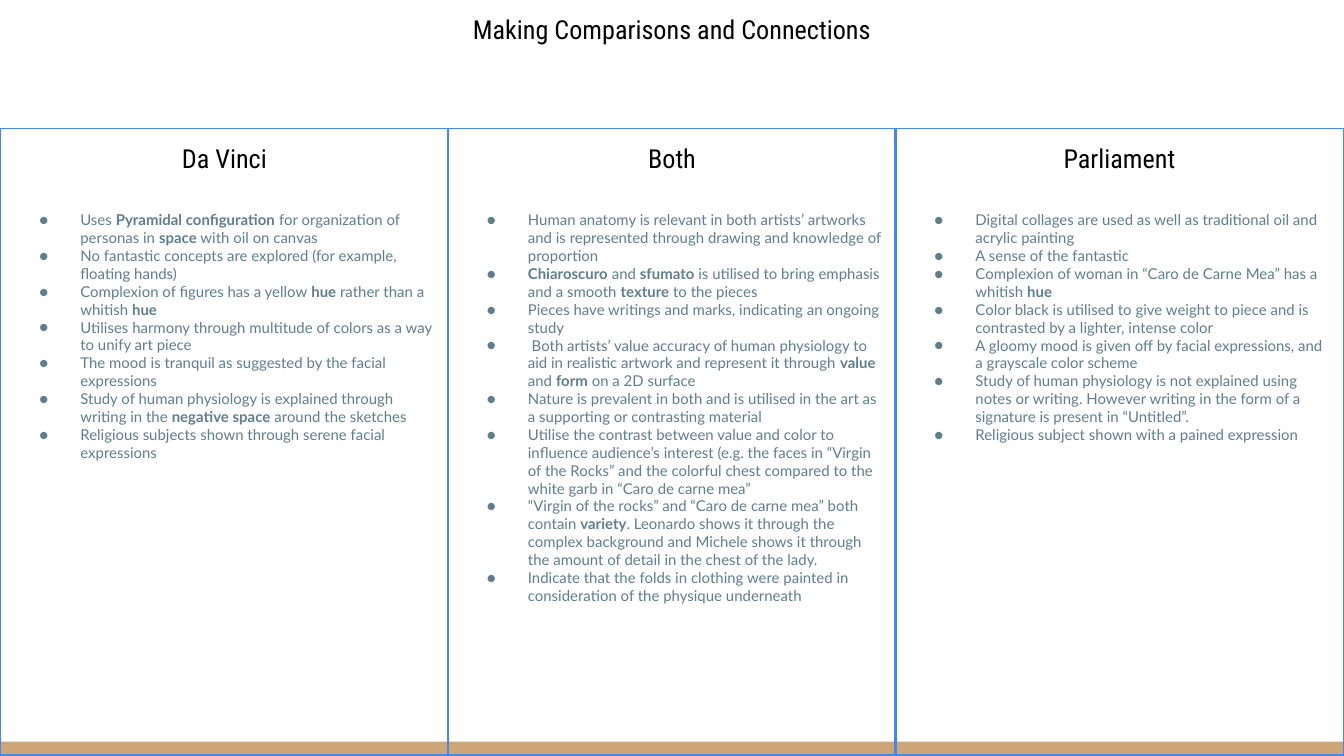
from pptx import Presentation
from pptx.dml.color import RGBColor
from pptx.enum.shapes import MSO_SHAPE as Shape
from pptx.enum.text import PP_ALIGN as Align
from pptx.oxml.ns import qn
from pptx.util import Pt
from lxml.etree import SubElement

BLACK, SLATE, BLUE, TAN = "000000", "607D8B", "4A86E8", "CCA677"
COLUMN_TOP, COLUMN_WIDTH, COLUMN_PITCH = 69, 240.5, 239.75

# Heading, heading width, body height and bullets; ** marks bold words
columns = [
    ("Da Vinci", 309.6, 299.5, [
        "Uses **Pyramidal configuration** for organization of personas in **space** with oil on canvas",
        "No fantastic concepts are explored (for example, floating hands)",
        "Complexion of figures has a yellow **hue** rather than a whitish **hue**",
        "Utilises harmony through multitude of colors as a way to unify art piece",
        "The mood is tranquil as suggested by the facial expressions",
        "Study of human physiology is explained through writing in the **negative space** around the sketches",
        "Religious subjects shown through serene facial expressions",
    ]),
    ("Both", 75.6, 297.5, [
        "Human anatomy is relevant in both artists’ artworks and is represented through drawing "
        "and knowledge of proportion",
        "**Chiaroscuro** and **sfumato** is utilised to bring emphasis and a smooth **texture** to the pieces",
        "Pieces have writings and marks, indicating an ongoing study",
        " Both artists’ value accuracy of human physiology to aid in realistic artwork and represent it "
        "through **value** and **form** on a 2D surface",
        "Nature is prevalent in both and is utilised in the art as a supporting or contrasting material",
        "Utilise the contrast between value and color to influence audience’s interest (e.g. the faces in "
        "“Virgin of the Rocks” and the colorful chest compared to the white garb in “Caro de carne mea”",
        "“Virgin of the rocks” and “Caro de carne mea” both contain **variety**. Leonardo shows it through "
        "the complex background and Michele shows it through the amount of detail in the chest of the lady.",
        "Indicate that the folds in clothing were painted in consideration of the physique underneath",
    ]),
    ("Parliament", 309.6, 295, [
        "Digital collages are used as well as traditional oil and acrylic painting",
        "A sense of the fantastic",
        "Complexion of woman in “Caro de Carne Mea” has a whitish **hue**",
        "Color black is utilised to give weight to piece and is contrasted by a lighter, intense color",
        "A gloomy mood is given off by facial expressions, and a grayscale color scheme",
        "Study of human physiology is not explained using notes or writing. However writing in the form "
        "of a signature is present in “Untitled”.",
        "Religious subject shown with a pained expression",
    ]),
]


def color(value):
    return RGBColor.from_string(value)


def add_text(left, top, width, height, lines, font, size, text_color, bulleted=False):
    text_frame = slide.shapes.add_textbox(Pt(left), Pt(top), Pt(width), Pt(height)).text_frame
    text_frame.word_wrap = True
    text_frame.margin_left = text_frame.margin_right = Pt(7.2)
    text_frame.margin_top = text_frame.margin_bottom = Pt(7.2)
    for index, line in enumerate(lines):
        paragraph = text_frame.add_paragraph() if index else text_frame.paragraphs[0]
        paragraph.alignment = Align.LEFT if bulleted else Align.CENTER
        if bulleted:
            properties = paragraph._p.get_or_add_pPr()
            properties.set("marL", str(Pt(36)))
            properties.set("indent", str(Pt(-22)))
            bullet_color = SubElement(properties, qn("a:buClr"))
            SubElement(bullet_color, qn("a:srgbClr"), val=text_color)
            SubElement(properties, qn("a:buFont"), typeface=font)
            SubElement(properties, qn("a:buChar"), char="●")
        for position, part in enumerate(line.split("**")):
            if part:
                run = paragraph.add_run()
                run.text = part
                run.font.name = font
                run.font.size = Pt(size)
                run.font.bold = position % 2 == 1
                run.font.color.rgb = color(text_color)


presentation = Presentation()
presentation.slide_width, presentation.slide_height = Pt(720), Pt(405)
slide = presentation.slides.add_slide(presentation.slide_layouts[6])

# Bottom band
band = slide.shapes.add_shape(Shape.RECTANGLE, Pt(0), Pt(397.4), Pt(720), Pt(7.6))
band.shadow.inherit = False
band.fill.solid()
band.fill.fore_color.rgb = color(TAN)
band.line.fill.background()

# Column frames
for number in range(len(columns)):
    frame = slide.shapes.add_shape(Shape.RECTANGLE, Pt(number * COLUMN_PITCH), Pt(COLUMN_TOP),
                                   Pt(COLUMN_WIDTH), Pt(335.5))
    frame.shadow.inherit = False
    frame.fill.background()
    frame.line.color.rgb = color(BLUE)
    frame.line.width = Pt(0.75)

# Column headings and bullet lists
for number, (heading, heading_width, body_height, bullets) in enumerate(columns):
    left = number * COLUMN_PITCH
    heading_left = left + (COLUMN_WIDTH - heading_width) / 2
    add_text(heading_left, COLUMN_TOP, heading_width, 36, [heading], "Roboto Condensed", 14, BLACK)
    add_text(left, 105.8, COLUMN_WIDTH, body_height, bullets, "Lato", 8, SLATE, bulleted=True)

# Title
add_text(200, 0, 320, 37.5, ["Making Comparisons and Connections"], "Roboto Condensed", 14, BLACK)

presentation.save("out.pptx")
